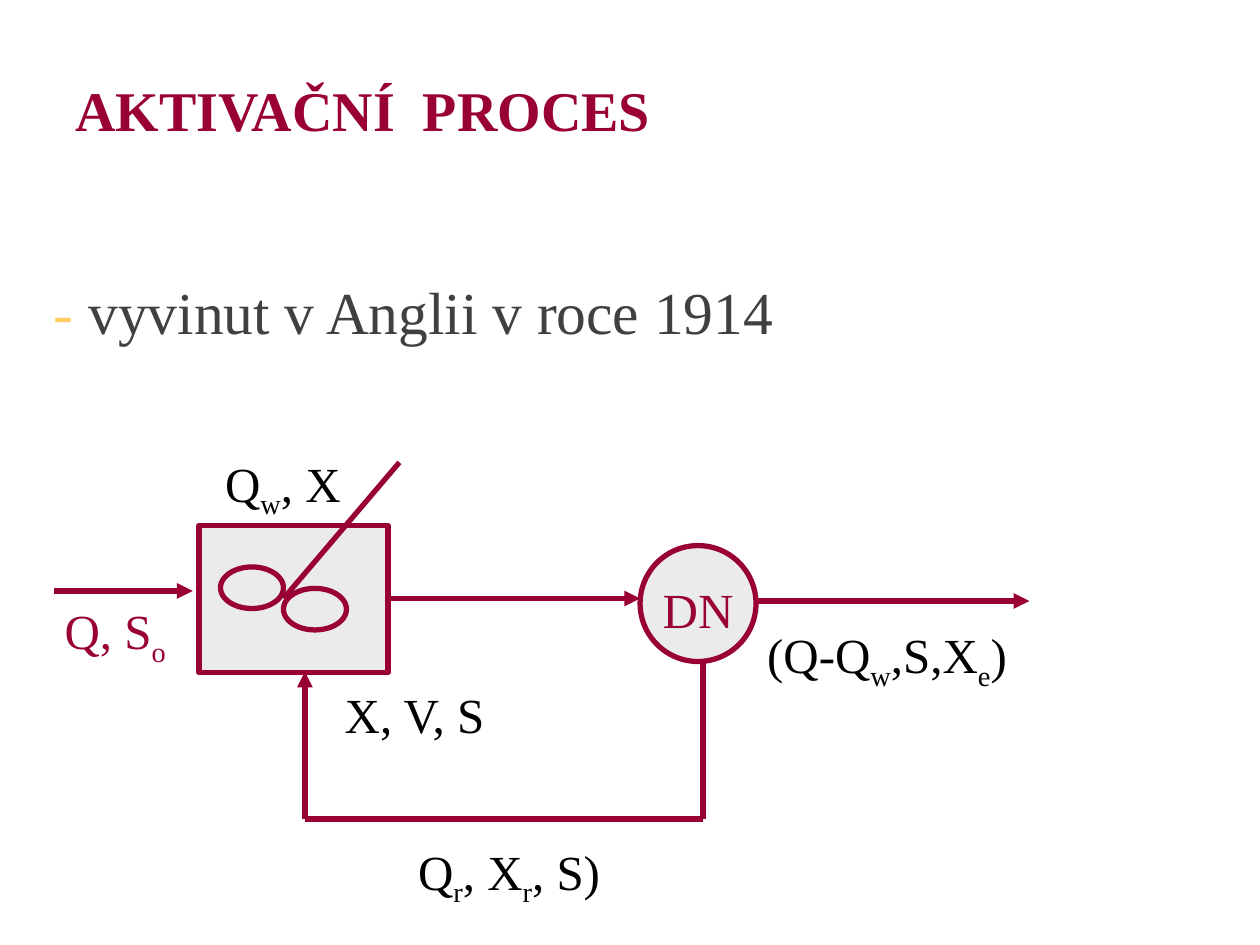
"""Builds a slide with a flow diagram of the activated sludge process."""
from lxml import etree
from pptx import Presentation
from pptx.dml.color import RGBColor
from pptx.enum.shapes import MSO_CONNECTOR, MSO_SHAPE
from pptx.enum.text import MSO_ANCHOR, PP_ALIGN
from pptx.oxml.ns import qn
from pptx.util import Inches, Pt

RECT, OVAL = MSO_SHAPE.RECTANGLE, MSO_SHAPE.OVAL
STRAIGHT = MSO_CONNECTOR.STRAIGHT
TOP = MSO_ANCHOR.TOP
LEFT, CENTER = PP_ALIGN.LEFT, PP_ALIGN.CENTER
WINE, GREY, BLACK = "990033", "EBEBEB", "000000"
GOLD, DARK = "FFCC66", "404040"


def rgb(value):
    return RGBColor.from_string(value)


class Diagram:
    font = "Times New Roman"
    line_width = Pt(3)
    label_size = 28

    def __init__(self, slide):
        self.s = slide

    def text(self, x, y, w, h, runs, size, align=LEFT, bold=False, top=0.1):
        """Runs are (text, colour, is_subscript) tuples."""
        tf = self.s.shapes.add_textbox(Inches(x), Inches(y), Inches(w), Inches(h)).text_frame
        tf.word_wrap = True
        tf.vertical_anchor = TOP
        tf.margin_top = Inches(top)
        p = tf.paragraphs[0]
        p.alignment = align
        for text, color, subscript in runs:
            r = p.add_run()
            r.text = text
            r.font.name = self.font
            r.font.size = Pt(size)
            r.font.bold = bold
            r.font.color.rgb = rgb(color)
            if subscript:
                r.font._element.set("baseline", "-25000")
        return p

    def label(self, x, y, w, text, color=BLACK):
        """An underscore makes the next letter a subscript."""
        first, *rest = text.split("_")
        runs = [(first, color, False)]
        for part in rest:
            runs.append((part[0], color, True))
            if part[1:]:
                runs.append((part[1:], color, False))
        self.text(x, y, w, 0.57, runs, self.label_size, CENTER)

    def shape(self, kind, x, y, w, h):
        sp = self.s.shapes.add_shape(kind, Inches(x), Inches(y), Inches(w), Inches(h))
        sp.shadow.inherit = False
        sp.fill.solid()
        sp.fill.fore_color.rgb = rgb(GREY)
        sp.line.color.rgb = rgb(WINE)
        sp.line.width = self.line_width

    def line(self, x1, y1, x2, y2, arrow=False):
        c = self.s.shapes.add_connector(STRAIGHT, Inches(x1), Inches(y1), Inches(x2), Inches(y2))
        c.line.color.rgb = rgb(WINE)
        c.line.width = self.line_width
        if arrow:
            etree.SubElement(c.line._get_or_add_ln(), qn("a:tailEnd"), type="triangle")
        etree.SubElement(c._element.spPr, qn("a:effectLst"))


def main():
    prs = Presentation()
    prs.slide_width, prs.slide_height = Inches(10), Inches(7.5)
    d = Diagram(prs.slides.add_slide(prs.slide_layouts[6]))

    d.text(0.5, 0.5, 9.5, 1.25, [("AKTIVAČNÍ  PROCES", WINE, False)], 32, bold=True)
    p = d.text(0.33, 1.83, 9.15, 1,
               [("- ", GOLD, False), ("vyvinut v Anglii v roce 1914", DARK, False)],
               34, top=0.42)
    p.line_spacing = 0.9

    d.line(3.08, 4.75, 5.08, 4.75, arrow=True)
    d.line(5.58, 5.25, 5.58, 6.5)
    d.label(0, 4.67, 1.83, "Q, S_o", WINE)

    d.shape(RECT, 1.58, 4.17, 1.5, 1.17)
    d.shape(OVAL, 2.25, 4.67, 0.5, 0.33)
    d.line(2.25, 4.75, 3.17, 3.67)
    d.shape(OVAL, 1.75, 4.5, 0.5, 0.33)
    d.label(1.33, 3.5, 1.83, "Q_w, X")

    d.line(6, 4.77, 8.17, 4.77, arrow=True)
    d.label(5, 4.86, 4.08, "(Q-Q_w,S,X_e)")
    d.line(2.42, 6.5, 2.42, 5.33, arrow=True)
    d.label(1.25, 5.33, 4.08, "X, V, S")
    d.line(5.58, 6.5, 2.42, 6.5)
    d.label(2, 6.58, 4.08, "Q_r, X_r, S)")

    d.shape(OVAL, 5.08, 4.33, 0.92, 0.92)
    d.label(5.08, 4.5, 0.92, "DN", WINE)
    d.line(0.43, 4.69, 1.53, 4.69, arrow=True)

    prs.save("out.pptx")


if __name__ == "__main__":
    main()
